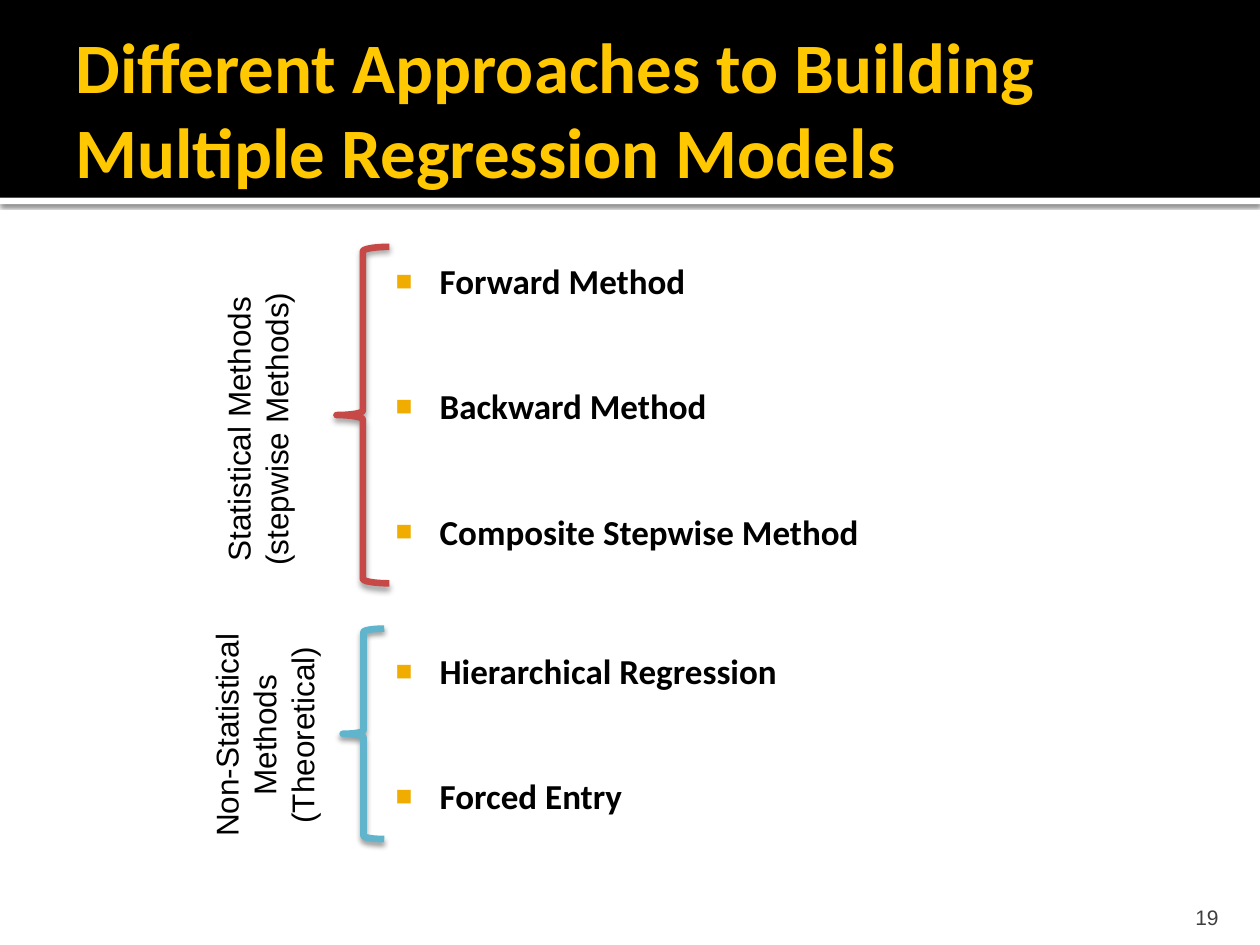
from lxml.etree import SubElement
from pptx import Presentation
from pptx.dml.color import RGBColor
from pptx.enum.shapes import MSO_SHAPE
from pptx.enum.text import MSO_ANCHOR, PP_ALIGN
from pptx.oxml.ns import qn
from pptx.util import Inches, Pt

INK = {"black": "000000", "white": "FFFFFF", "title": "FFC800", "bullet": "F0AD00",
       "red": "C64847", "blue": "60B5CC", "grey": "3F3F3F"}

# Content; boxes are left, top, width, height in percent of the slide
TITLE = "Different Approaches to Building Multiple Regression Models"
HEAD = 20.93
GROUPS = [
    {"label": "Statistical Methods (stepwise Methods)", "at": (8.2, 40.67, 24.5, 9.47),
     "brace": (26.7, 26.13, 4.2, 35.6), "ink": "red", "line": 3.78, "shade": (38, 3.5, 2),
     "items": ["Forward Method", "Backward Method", "Composite Stepwise Method"]},
    {"label": "Non-Statistical Methods (Theoretical)", "at": (8.9, 71.07, 24.2, 13.47),
     "brace": (27.2, 66.53, 3.3, 22.27), "ink": "blue", "line": 3.82, "shade": (38, 3.1, 2.1),
     "items": ["Hierarchical Regression", "Forced Entry"]},
]
ITEM_GAP, GROUP_GAP = 47.6, 55.6  # points before an item

deck = Presentation()
deck.slide_width, deck.slide_height = Inches(10), Inches(7.5)
slide = deck.slides.add_slide(deck.slide_layouts[6])


def color(name):
    return RGBColor.from_string(INK[name])


def place(box):
    sides = (deck.slide_width, deck.slide_height) * 2
    return [round(part * side / 100) for part, side in zip(box, sides)]


def shape(kind, box, shade=None):
    item = slide.shapes.add_shape(kind, *place(box))
    item.shadow.inherit = False
    if shade:
        alpha, blur, dist = shade
        glow = SubElement(item.element.spPr.find(qn("a:effectLst")), qn("a:outerShdw"),
                          blurRad=str(Pt(blur)), dist=str(Pt(dist)), dir="5400000",
                          rotWithShape="0")
        tint = SubElement(glow, qn("a:srgbClr"), val=INK["black"])
        SubElement(tint, qn("a:alpha"), val=str(alpha * 1000))
    return item


def bar(box, ink, shade=None):
    item = shape(MSO_SHAPE.RECTANGLE, box, shade)
    item.fill.solid()
    item.fill.fore_color.rgb = color(ink)
    item.line.fill.background()


def style(para, size, face, ink, bold=False):
    font = para.font
    font.size, font.name, font.bold = Pt(size), face, bold
    font.color.rgb = color(ink)


def frame(box, pads=(0.1, 0.05, 0.1, 0.05), anchor=MSO_ANCHOR.TOP, turn=0):
    item = slide.shapes.add_textbox(*place(box))
    item.rotation = turn
    text = item.text_frame
    text.word_wrap, text.vertical_anchor = True, anchor
    (text.margin_left, text.margin_top,
     text.margin_right, text.margin_bottom) = map(Inches, pads)
    return text


def write(text, words, size, face, ink, bold=False, align=PP_ALIGN.LEFT):
    para = text.paragraphs[0]
    para.text, para.alignment = words, align
    style(para, size, face, ink, bold)


def bullet(para):
    props = para._p.get_or_add_pPr()
    props.set("marL", str(Inches(0.48)))
    props.set("indent", str(Inches(-0.35)))
    tint = SubElement(props, qn("a:buClr"))
    SubElement(tint, qn("a:srgbClr"), val=INK["bullet"])
    SubElement(props, qn("a:buSzPct"), val="80000")
    SubElement(props, qn("a:buFont"), typeface="Arial")
    SubElement(props, qn("a:buChar"), char="■")


# Header band and title
bar((0, HEAD, 100, 0.67), "white", (60, 2.5, 0.8))
bar((0, 0, 100, HEAD), "black")
title = frame((5, 2.27, 90, 18.27), (0.1, 0.05, 0.05, 0.05), MSO_ANCHOR.MIDDLE)
write(title, TITLE, 40.5, "Calibri", "title", bold=True)

# List of methods
body = frame((29.5, 26.13, 46.7, 67.47), (0.06, 0.1, 0.1, 0.05))
for g, group in enumerate(GROUPS):
    for i, name in enumerate(group["items"]):
        first = g == i == 0
        para = body.paragraphs[0] if first else body.add_paragraph()
        para.text = name
        para.space_before = Pt(0 if first else ITEM_GAP if i else GROUP_GAP)
        style(para, 20, "Calibri", "black", bold=True)
        bullet(para)

# Braces with turned labels
for group in GROUPS:
    brace = shape(MSO_SHAPE.LEFT_BRACE, group["brace"], group["shade"])
    brace.fill.background()
    brace.line.color.rgb = color(group["ink"])
    brace.line.width = Pt(group["line"])
    label = frame(group["at"], turn=270)
    write(label, group["label"], 18, "Arial", "black", align=PP_ALIGN.CENTER)

# Slide number
number = frame((89.7, 94.4, 8, 4), (0.1, 0.05, 0.1, 0), MSO_ANCHOR.BOTTOM)
write(number, "19", 12, "Arial", "grey", align=PP_ALIGN.RIGHT)

deck.save("out.pptx")
